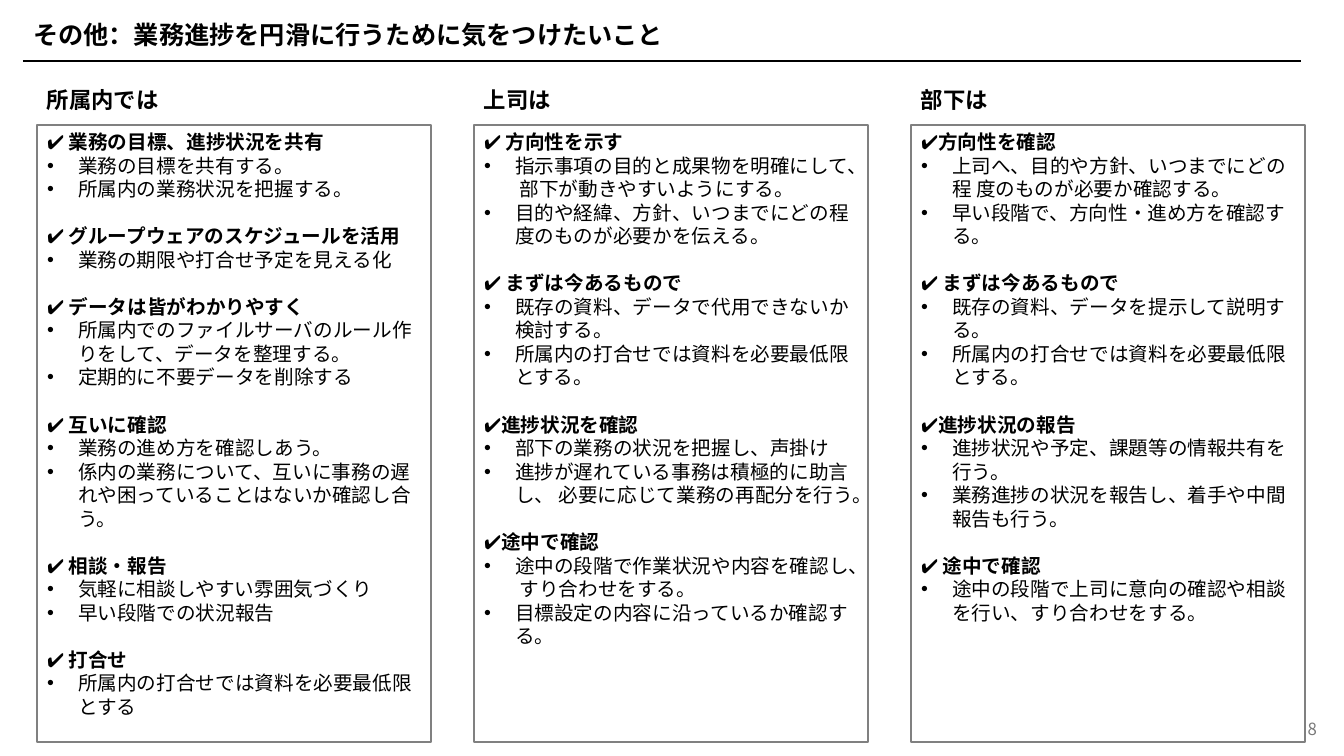
import pptx
import pptx.dml.color
import pptx.enum.shapes
import pptx.enum.text
import pptx.oxml.ns
import pptx.util
from lxml import etree

EMU_PER_PX = 914400 / 100.8
BLACK = pptx.dml.color.RGBColor(0x00, 0x00, 0x00)
FRAME_GRAY = pptx.dml.color.RGBColor(0x80, 0x80, 0x80)
NUMBER_GRAY = pptx.dml.color.RGBColor(0x79, 0x79, 0x79)
GOTHIC = "Noto Sans CJK JP"
LINE_PITCH = pptx.util.Pt(16.8)
ALIGN = pptx.enum.text.PP_ALIGN
ANCHOR = pptx.enum.text.MSO_ANCHOR

COLUMNS = [
    ("所属内では", [
        ("✔ 業務の目標、進捗状況を共有",
         ["業務の目標を共有する。", "所属内の業務状況を把握する。"]),
        ("✔ グループウェアのスケジュールを活用",
         ["業務の期限や打合せ予定を見える化"]),
        ("✔ データは皆がわかりやすく",
         ["所属内でのファイルサーバのルール作りをして、データを整理する。",
          "定期的に不要データを削除する"]),
        ("✔ 互いに確認",
         ["業務の進め方を確認しあう。",
          "係内の業務について、互いに事務の遅れや困っていることはないか確認し合う。"]),
        ("✔ 相談・報告",
         ["気軽に相談しやすい雰囲気づくり", "早い段階での状況報告"]),
        ("✔ 打合せ",
         ["所属内の打合せでは資料を必要最低限 とする"]),
    ]),
    ("上司は", [
        ("✔ 方向性を示す",
         ["指示事項の目的と成果物を明確にして、 部下が動きやすいようにする。",
          "目的や経緯、方針、いつまでにどの程度のものが必要かを伝える。"]),
        ("✔ まずは今あるもので",
         ["既存の資料、データで代用できないか 検討する。",
          "所属内の打合せでは資料を必要最低限 とする。"]),
        ("✔進捗状況を確認",
         ["部下の業務の状況を把握し、声掛け",
          "進捗が遅れている事務は積極的に助言し、 必要に応じて業務の再配分を行う。"]),
        ("✔途中で確認",
         ["途中の段階で作業状況や内容を確認し、 すり合わせをする。",
          "目標設定の内容に沿っているか確認する。"]),
    ]),
    ("部下は", [
        ("✔方向性を確認",
         ["上司へ、目的や方針、いつまでにどの程 度のものが必要か確認する。",
          "早い段階で、方向性・進め方を確認する。"]),
        ("✔ まずは今あるもので",
         ["既存の資料、データを提示して説明する。",
          "所属内の打合せでは資料を必要最低限とする。"]),
        ("✔進捗状況の報告",
         ["進捗状況や予定、課題等の情報共有を 行う。",
          "業務進捗の状況を報告し、着手や中間 報告も行う。"]),
        ("✔ 途中で確認",
         ["途中の段階で上司に意向の確認や相談を行い、すり合わせをする。"]),
    ]),
]


def px(length):
    return pptx.util.Emu(round(length * EMU_PER_PX))


def place(shape, left, top, width, height):
    shape.left, shape.top = px(left), px(top)
    shape.width, shape.height = px(width), px(height)


def prepare_frame(frame, anchor):
    frame.word_wrap = True
    frame.auto_size = pptx.enum.text.MSO_AUTO_SIZE.NONE
    frame.vertical_anchor = anchor


def format_paragraph(paragraph, size, bold, color=BLACK, latin=GOTHIC, align=ALIGN.LEFT):
    paragraph.alignment = align
    font = paragraph.font
    font.size = pptx.util.Pt(size)
    font.bold = bold
    font.color.rgb = color
    font.name = latin
    east_asian = etree.SubElement(font._element, pptx.oxml.ns.qn("a:ea"))
    east_asian.set("typeface", GOTHIC)


def set_bullet(paragraph, char=None):
    indent = px(31) if char else 0
    properties = paragraph._p.get_or_add_pPr()
    properties.set("marL", str(indent))
    properties.set("indent", str(-indent))
    if char:
        bullet_font = etree.SubElement(properties, pptx.oxml.ns.qn("a:buFont"))
        bullet_font.set("typeface", "Arial")
        bullet = etree.SubElement(properties, pptx.oxml.ns.qn("a:buChar"))
        bullet.set("char", char)
    else:
        etree.SubElement(properties, pptx.oxml.ns.qn("a:buNone"))


def add_label(slide, text, box, size, **style):
    label = slide.shapes.add_textbox(*map(px, box))
    prepare_frame(label.text_frame, ANCHOR.MIDDLE)
    paragraph = label.text_frame.paragraphs[0]
    paragraph.text = text
    format_paragraph(paragraph, size, **style)


def fill_title(title, text):
    place(title, 23, 14, 1295, 40)
    prepare_frame(title.text_frame, ANCHOR.MIDDLE)
    paragraph = title.text_frame.paragraphs[0]
    paragraph.text = text
    format_paragraph(paragraph, 18, True, latin="Times New Roman")


def add_title_rule(slide):
    rule = slide.shapes.add_connector(
        pptx.enum.shapes.MSO_CONNECTOR.STRAIGHT, px(23), px(61), px(1301), px(61))
    rule.line.color.rgb = BLACK
    rule.line.width = pptx.util.Pt(1.5)
    etree.SubElement(rule._element.spPr, pptx.oxml.ns.qn("a:effectLst"))


def fill_checklist(checklist, left, topics):
    place(checklist, left, 125, 394, 617)
    checklist.line.color.rgb = FRAME_GRAY
    checklist.line.width = pptx.util.Pt(1.25)
    frame = checklist.text_frame
    prepare_frame(frame, ANCHOR.TOP)
    entries = [(text, text is topic) for topic, points in topics for text in [topic, *points]]
    for index, (text, is_topic) in enumerate(entries):
        paragraph = frame.add_paragraph() if index else frame.paragraphs[0]
        paragraph.text = text
        paragraph.line_spacing = LINE_PITCH
        paragraph.space_before = LINE_PITCH if is_topic and index else pptx.util.Pt(0)
        paragraph.space_after = pptx.util.Pt(0)
        set_bullet(paragraph, None if is_topic else "•")
        format_paragraph(paragraph, 14, is_topic)


def main():
    presentation = pptx.Presentation()
    presentation.slide_width, presentation.slide_height = px(1344), px(756)
    slide = presentation.slides.add_slide(presentation.slide_layouts.get_by_name("Comparison"))
    title, *checklists, spare = list(slide.placeholders)
    fill_title(title, "その他：業務進捗を円滑に行うために気をつけたいこと")
    add_title_rule(slide)
    for column, (checklist, (heading, topics)) in enumerate(zip(checklists, COLUMNS)):
        left = 37 + 437 * column
        add_label(slide, heading, (left, 81, 342, 37), 16, bold=True)
        fill_checklist(checklist, left, topics)
    spare._element.getparent().remove(spare._element)
    add_label(slide, "8", (1025, 709, 302, 40), 12, bold=False, color=NUMBER_GRAY, align=ALIGN.RIGHT)
    presentation.save("out.pptx")


if __name__ == "__main__":
    main()
